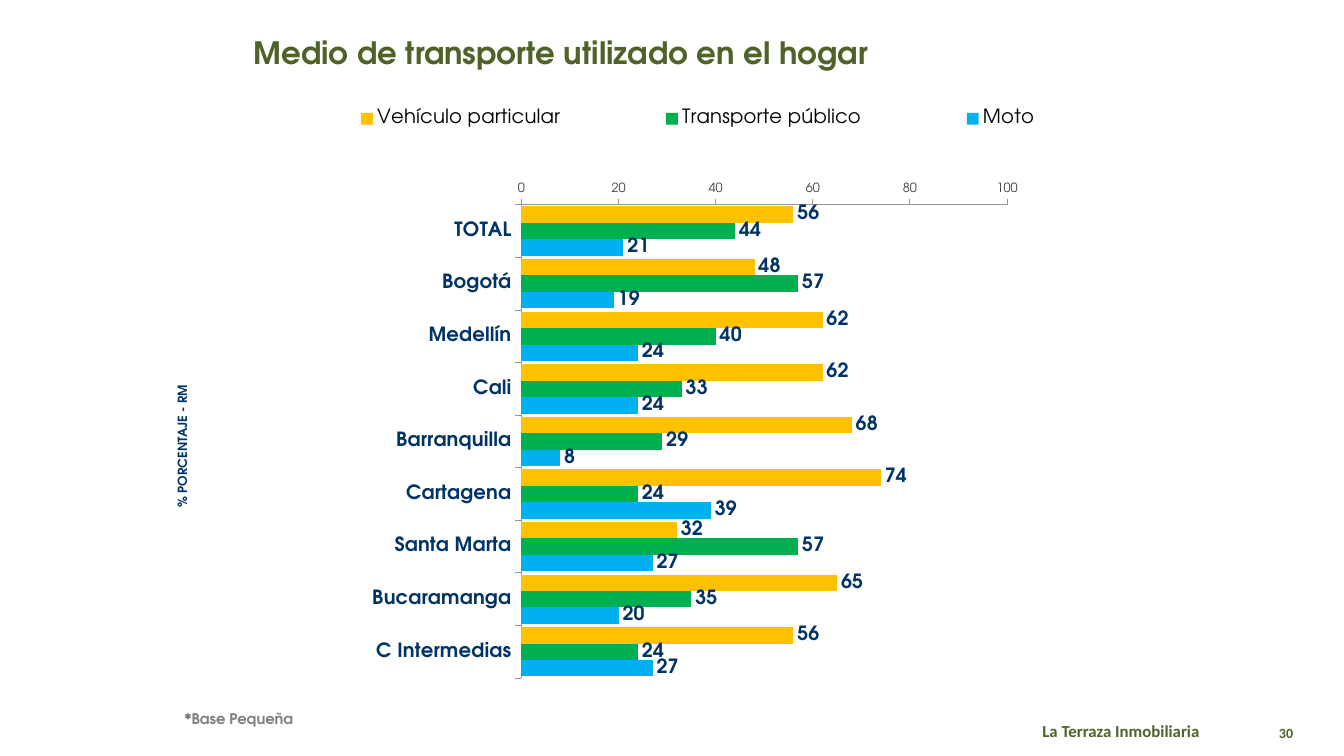
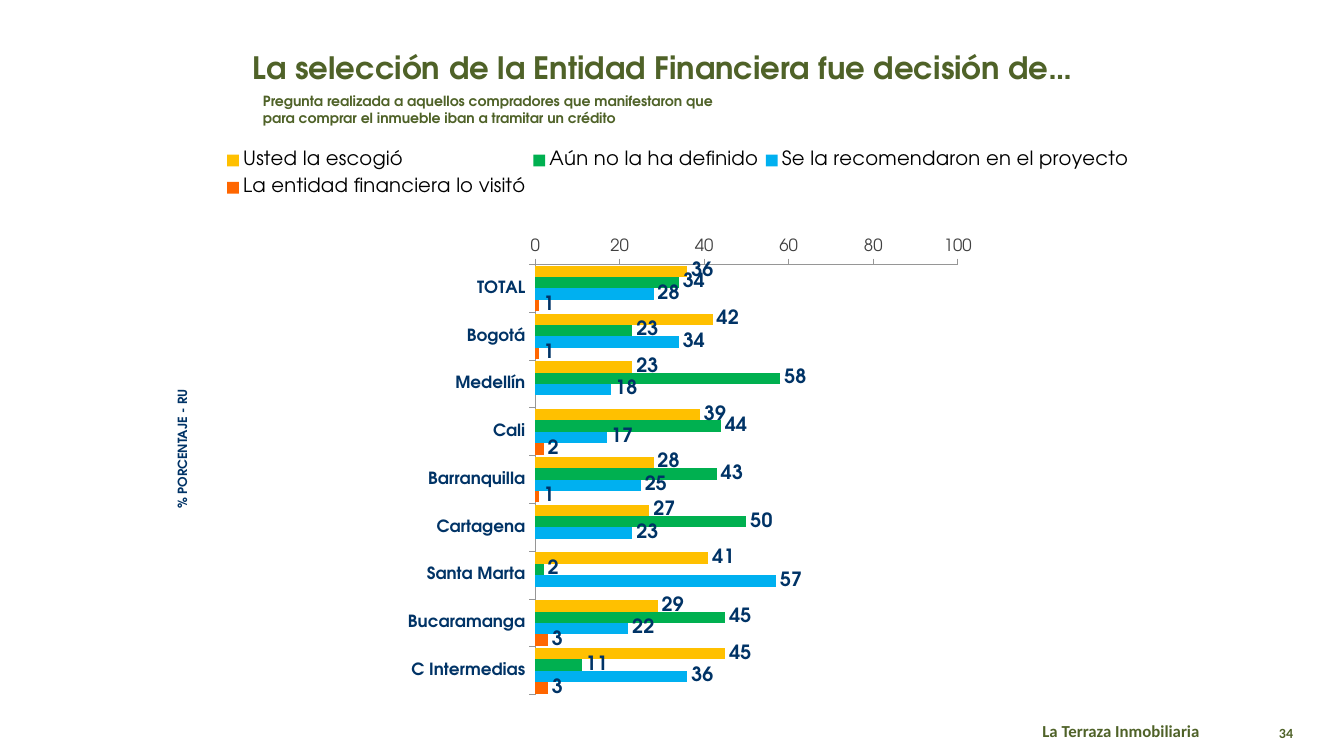
import pptx
import pptx.chart.data
import pptx.dml.color
import pptx.enum.chart
import pptx.enum.shapes
import pptx.enum.text
import pptx.oxml
import pptx.oxml.ns
import pptx.util

Inches = pptx.util.Inches
Pt = pptx.util.Pt
XL = pptx.enum.chart
ALIGN = pptx.enum.text.PP_ALIGN

# Shared look
FACE = "TeX Gyre Adventor"
GREEN, NAVY, GRAY, WHITE = "4F6228", "003366", "808080", "FFFFFF"
HUES = ["FFC000", "00B050", "00B0F0", "FF6600"]
TITLE = dict(size=22, color=GREEN)
LABEL = dict(size=14, color=NAVY)
CITIES = ["TOTAL", "Bogotá", "Medellín", "Cali", "Barranquilla",
          "Cartagena", "Santa Marta", "Bucaramanga", "C Intermedias"]


def tint(hue):
    return pptx.dml.color.RGBColor.from_string(hue)


def assign(target, **values):
    for name, value in values.items():
        setattr(target, name, value)


def style(font, size, color, name=FACE, bold=True):
    assign(font, size=Pt(size), name=name, bold=bold)
    font.color.rgb = tint(color)


def paint(fill, hue):
    fill.solid()
    fill.fore_color.rgb = tint(hue)


# Text
def write(frame, words, look, align=ALIGN.LEFT):
    para = frame.paragraphs[0]
    para.alignment = align
    run = para.add_run()
    run.text = words
    style(run.font, **look)


def text(slide, box, words, look, wrap=True, align=ALIGN.LEFT):
    shape = slide.shapes.add_textbox(*map(Inches, box))
    shape.text_frame.word_wrap = wrap
    write(shape.text_frame, words, look, align)
    return shape


def side(slide, top, words):
    shape = text(slide, (0.83, top, 1.95, 0.23), words,
                 dict(size=9, color=NAVY), align=ALIGN.CENTER)
    shape.rotation = 270
    assign(shape.text_frame, margin_left=Inches(0.07), margin_right=Inches(0.07),
           margin_top=Inches(0.04), margin_bottom=Inches(0.04))


def footer(slide, page):
    oval = slide.shapes.add_shape(pptx.enum.shapes.MSO_SHAPE.OVAL,
                                  *map(Inches, (12.44, 7.09, 0.63, 0.36)))
    oval.shadow.inherit = False
    paint(oval.fill, WHITE)
    paint(oval.line.fill, WHITE)
    oval.line.width = Pt(2)
    assign(oval.text_frame, margin_left=0, margin_right=0,
           vertical_anchor=pptx.enum.text.MSO_ANCHOR.MIDDLE)
    write(oval.text_frame, page, dict(size=10, color=GREEN, name="Calibri"), ALIGN.CENTER)
    text(slide, (10.24, 7.1, 2.41, 0.33), "La Terraza Inmobiliaria",
         dict(size=12, color=GREEN, name="Calibri"))


# Charts
def layout(x, y, w, h, inner=False):
    target = '<c:layoutTarget val="inner"/>' if inner else ""
    modes = "".join(f'<c:{k}Mode val="edge"/>' for k in "xy")
    sizes = "".join(f'<c:{k} val="{v}"/>' for k, v in zip("xywh", (x, y, w, h)))
    return pptx.oxml.parse_xml(
        f'<c:layout {pptx.oxml.ns.nsdecls("c")}><c:manualLayout>'
        f'{target}{modes}{sizes}</c:manualLayout></c:layout>')


def bars(slide, box, kind, cats, rows, plot):
    data = pptx.chart.data.CategoryChartData(number_format="0")
    data.categories = cats
    for name, vals in rows:
        data.add_series(name, vals)
    chart = slide.shapes.add_chart(kind, *map(Inches, box), data).chart
    assign(chart, has_title=False, has_legend=False)
    style(chart.font, 7.4, "000000", "Karla")
    assign(chart.plots[0], gap_width=20, vary_by_categories=False)
    for series, hue in zip(chart.plots[0].series, HUES):
        paint(series.format.fill, hue)
    chart.category_axis.reverse_order = True
    chart.value_axis.has_major_gridlines = False
    area = chart._chartSpace.chart.plotArea
    for old in area.findall(pptx.oxml.ns.qn("c:layout")):
        area.remove(old)
    area.insert(0, layout(*plot, inner=True))
    return chart


def result(slide, box, rows, cat_size, val_size):
    named = [(f"Series {i}", vals) for i, vals in enumerate(rows, 1)]
    chart = bars(slide, box, XL.XL_CHART_TYPE.BAR_CLUSTERED, CITIES, named,
                 (0.35, 0.08, 0.53, 0.91))
    assign(chart.value_axis, minimum_scale=0, maximum_scale=100, major_unit=20)
    looks = [(chart.category_axis, cat_size, NAVY, True),
             (chart.value_axis, val_size, "404040", False)]
    for axis, size, hue, bold in looks:
        axis.major_tick_mark = XL.XL_TICK_MARK.OUTSIDE
        paint(axis.format.line.fill, "969696")
        axis.format.line.width = Pt(0.75)
        style(axis.tick_labels.font, size, hue, bold=bold)
    assign(chart.value_axis.tick_labels, number_format="0", number_format_is_linked=False)
    for series in chart.plots[0].series:
        tags = series.data_labels
        assign(tags, show_value=True, number_format="0", number_format_is_linked=False,
               position=XL.XL_LABEL_POSITION.OUTSIDE_END)
        style(tags.font, **LABEL)


def legend(slide, box, names):
    rows = [(name, [None if i else 100]) for i, name in enumerate(names)]
    chart = bars(slide, box, XL.XL_CHART_TYPE.BAR_STACKED, ["1"], rows,
                 (0.44, 0.44, 0.02, 0.06))
    chart.plots[0].overlap = 100
    # The scale starts at the only value, so just the key shows
    assign(chart.value_axis, minimum_scale=100, maximum_scale=329, major_unit=66, visible=False)
    chart.category_axis.visible = False
    chart.has_legend = True
    key = chart.legend
    assign(key, position=XL.XL_LEGEND_POSITION.TOP, include_in_layout=False)
    style(key.font, 14, "000000", bold=False)
    node = key._element
    for old in node.findall(pptx.oxml.ns.qn("c:layout")):
        node.remove(old)
    node.find(pptx.oxml.ns.qn("c:legendPos")).addnext(layout(0, 0.11, 1, 0.65))


# Slides
def travel(slide):
    footer(slide, "30")
    result(slide, (1.99, 1.62, 9.09, 5.16), [
        [56, 48, 62, 62, 68, 74, 32, 65, 56],
        [44, 57, 40, 33, 29, 24, 57, 35, 24],
        [21, 19, 24, 24, 8, 39, 27, 20, 27]], 14, 9)
    legend(slide, (2.6, 0.76, 8.64, 0.96),
           ["Vehículo particular", "Transporte público", "Moto"])
    text(slide, (1.73, 6.99, 1.29, 0.28), "*Base Pequeña",
         dict(size=10.5, color=GRAY), wrap=False)
    text(slide, (2.42, 0.29, 7.45, 0.53), "Medio de transporte utilizado en el hogar", TITLE)
    side(slide, 4.31, "% PORCENTAJE - RM")


def lender(slide):
    footer(slide, "34")
    side(slide, 4.34, "% PORCENTAJE - RU")
    legend(slide, (2.18, 1.31, 9.09, 0.96),
           ["Usted la escogió", "Aún no la ha definido",
            "Se la recomendaron en el proyecto", "La entidad financiera lo visitó"])
    text(slide, (2.41, 0.43, 9.13, 0.39),
         "La selección de la Entidad Financiera fue decisión de…", TITLE)
    text(slide, (2.51, 0.87, 4.79, 0.44),
         "Pregunta realizada a aquellos compradores que manifestaron que "
         "para comprar el inmueble iban a tramitar un crédito", dict(size=10, color=GREEN))
    result(slide, (2.54, 2.25, 7.91, 4.69), [
        [36, 42, 23, 39, 28, 27, 41, 29, 45],
        [34, 23, 58, 44, 43, 50, 2, 45, 11],
        [28, 34, 18, 17, 25, 23, 57, 22, 36],
        [1, 1, None, 2, 1, None, None, 3, 3]], 12, 12)


def main():
    deck = pptx.Presentation()
    assign(deck, slide_width=Inches(13.33), slide_height=Inches(7.5))
    for build in (travel, lender):
        build(deck.slides.add_slide(deck.slide_layouts[6]))
    deck.save("out.pptx")


if __name__ == "__main__":
    main()
